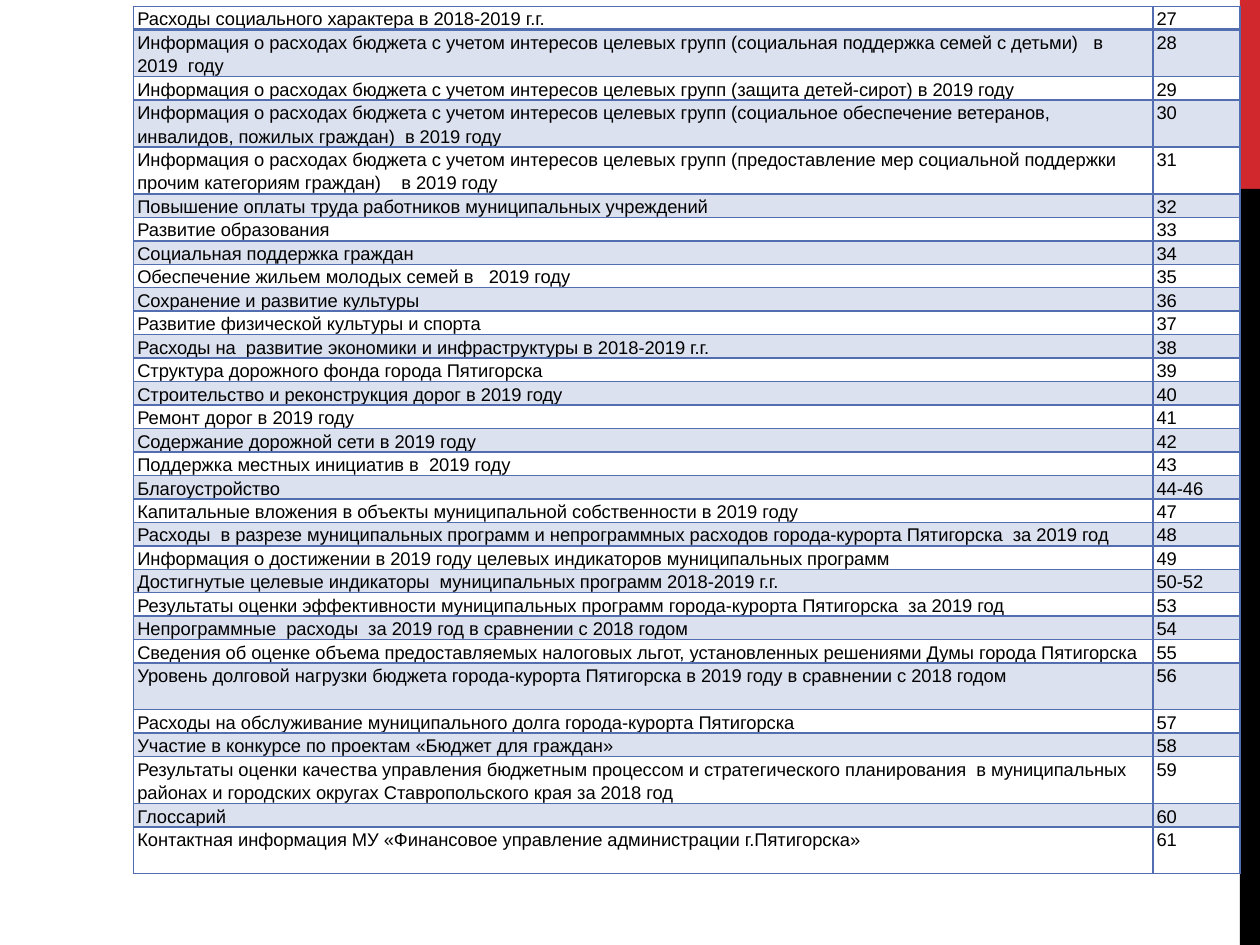
from dataclasses import dataclass

from lxml import etree
from pptx import Presentation
from pptx import util as u
from pptx.dml.color import RGBColor
from pptx.enum import shapes, text
from pptx.oxml import ns


@dataclass(frozen=True)
class Theme:
    """Colours, font and sizes of the slide."""
    accent: str = "526DB0"
    red: str = "D1282E"
    black: str = "000000"
    font: str = "Arial"
    size: float = 10.5
    spacing: float = 1.15
    band_alpha: int = 20
    border: float = 1
    heavy_border: float = 2


THEME = Theme()
LINE, DOUBLE = 0.18, 0.37
TALL_PAGES = {"28", "30", "31", "56", "59", "61"}
CONTENTS = [
    ("Расходы социального характера в 2018-2019 г.г.", "27"),
    ("Информация о расходах бюджета с учетом интересов целевых групп "
     "(социальная поддержка семей с детьми)   в 2019  году", "28"),
    ("Информация о расходах бюджета с учетом интересов целевых групп "
     "(защита детей-сирот) в 2019 году", "29"),
    ("Информация о расходах бюджета с учетом интересов целевых групп "
     "(социальное обеспечение ветеранов, инвалидов, пожилых граждан)  в 2019 году", "30"),
    ("Информация о расходах бюджета с учетом интересов целевых групп "
     "(предоставление мер социальной поддержки прочим категориям граждан)    в 2019 году", "31"),
    ("Повышение оплаты труда работников муниципальных учреждений", "32"),
    ("Развитие образования", "33"),
    ("Социальная поддержка граждан", "34"),
    ("Обеспечение жильем молодых семей в   2019 году", "35"),
    ("Сохранение и развитие культуры", "36"),
    ("Развитие физической культуры и спорта", "37"),
    ("Расходы на  развитие экономики и инфраструктуры в 2018-2019 г.г.", "38"),
    ("Структура дорожного фонда города Пятигорска", "39"),
    ("Строительство и реконструкция дорог в 2019 году", "40"),
    ("Ремонт дорог в 2019 году", "41"),
    ("Содержание дорожной сети в 2019 году", "42"),
    ("Поддержка местных инициатив в  2019 году", "43"),
    ("Благоустройство", "44-46"),
    ("Капитальные вложения в объекты муниципальной собственности в 2019 году", "47"),
    ("Расходы  в разрезе муниципальных программ и непрограммных расходов "
     "города-курорта Пятигорска  за 2019 год", "48"),
    ("Информация о достижении в 2019 году целевых индикаторов муниципальных программ", "49"),
    ("Достигнутые целевые индикаторы  муниципальных программ 2018-2019 г.г.", "50-52"),
    ("Результаты оценки эффективности муниципальных программ "
     "города-курорта Пятигорска  за 2019 год", "53"),
    ("Непрограммные  расходы  за 2019 год в сравнении с 2018 годом", "54"),
    ("Сведения об оценке объема предоставляемых налоговых льгот, "
     "установленных решениями Думы города Пятигорска", "55"),
    ("Уровень долговой нагрузки бюджета города-курорта Пятигорска "
     "в 2019 году в сравнении с 2018 годом", "56"),
    ("Расходы на обслуживание муниципального долга города-курорта Пятигорска", "57"),
    ("Участие в конкурсе по проектам «Бюджет для граждан»", "58"),
    ("Результаты оценки качества управления бюджетным процессом и стратегического "
     "планирования  в муниципальных районах и городских округах "
     "Ставропольского края за 2018 год", "59"),
    ("Глоссарий", "60"),
    ("Контактная информация МУ «Финансовое управление администрации г.Пятигорска»", "61"),
]


def colour(value):
    """Return an RGB colour from its hex text."""
    return RGBColor.from_string(value)


def set_borders(cell, top, bottom):
    """Draw the four borders of a cell, with widths in points."""
    props = cell._tc.get_or_add_tcPr()
    widths = {"L": THEME.border, "R": THEME.border, "T": top, "B": bottom}
    for side, width in widths.items():
        line = etree.SubElement(props, ns.qn(f"a:ln{side}"), w=str(u.Pt(width)))
        solid = etree.SubElement(line, ns.qn("a:solidFill"))
        etree.SubElement(solid, ns.qn("a:srgbClr"), val=THEME.accent)


def set_band(cell, banded):
    """Fill a banded cell with the pale accent and clear any other."""
    if not banded:
        cell.fill.background()
        return
    cell.fill.solid()
    cell.fill.fore_color.rgb = colour(THEME.accent)
    tint = cell._tc.tcPr.find(".//" + ns.qn("a:solidFill") + "[last()]")
    tint = cell._tc.tcPr.findall(ns.qn("a:solidFill"))[0][0]
    etree.SubElement(tint, ns.qn("a:alpha"), val=str(THEME.band_alpha * 1000))


def write_cell(cell, words):
    """Put one run of table text into a cell."""
    cell.margin_left = cell.margin_right = u.Inches(0.03)
    cell.margin_top = cell.margin_bottom = 0
    cell.vertical_anchor = text.MSO_ANCHOR.TOP
    para = cell.text_frame.paragraphs[0]
    para.line_spacing = THEME.spacing
    span = para.add_run()
    span.text = words
    span.font.name = THEME.font
    span.font.size = u.Pt(THEME.size)
    span.font.color.rgb = colour(THEME.black)


def add_contents(page, left, top, width, height):
    """Place the table of contents in its box."""
    table = page.shapes.add_table(len(CONTENTS), 2, left, top, width, height).table
    table.first_row = table.horz_banding = False
    number_width = u.Inches(0.69)
    table.columns[0].width = width - number_width
    table.columns[1].width = number_width
    for index, entry in enumerate(CONTENTS):
        table.rows[index].height = u.Inches(DOUBLE if entry[1] in TALL_PAGES else LINE)
        over = THEME.heavy_border if index == 1 else THEME.border
        under = THEME.heavy_border if index == 0 else THEME.border
        for column, words in enumerate(entry):
            cell = table.cell(index, column)
            write_cell(cell, words)
            set_borders(cell, over, under)
            set_band(cell, index % 2 == 1)


def add_side_bar(page, left, top, width, height):
    """Place the red and black bar, red for the top fifth."""
    red_height = height // 5
    parts = [(top, red_height, THEME.red),
             (top + red_height, height - red_height, THEME.black)]
    for part_top, part_height, fill in parts:
        box = page.shapes.add_shape(
            shapes.MSO_SHAPE.RECTANGLE, left, part_top, width, part_height)
        box.shadow.inherit = False
        box.fill.solid()
        box.fill.fore_color.rgb = colour(fill)
        box.line.fill.background()


def main():
    """Build the contents slide and save the deck."""
    deck = Presentation()
    deck.slide_width, deck.slide_height = u.Inches(10), u.Inches(7.5)
    page = deck.slides.add_slide(deck.slide_layouts[6])
    add_side_bar(page, u.Inches(9.84), 0, u.Inches(0.16), deck.slide_height)
    add_contents(page, u.Inches(1.06), u.Inches(0.05), u.Inches(8.78), u.Inches(6.89))
    deck.save("out.pptx")


if __name__ == "__main__":
    main()
